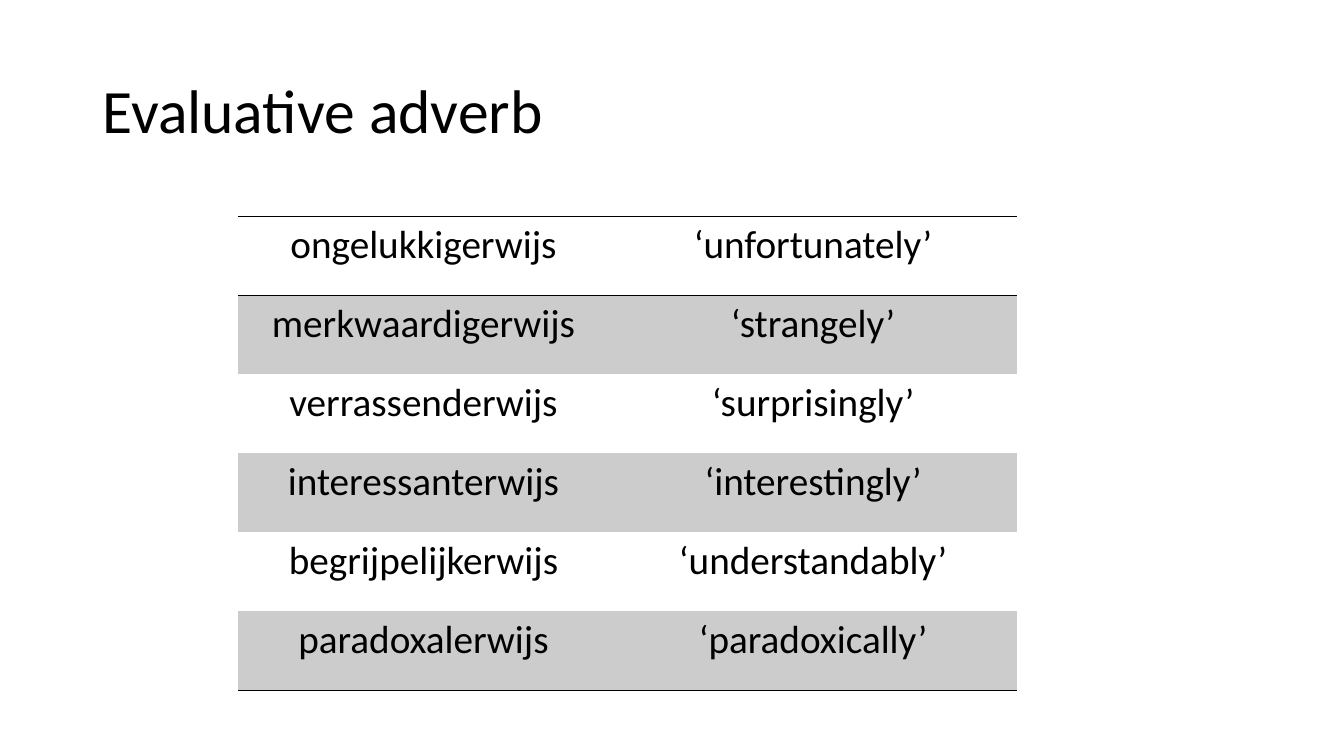
import lxml.etree
import pptx
import pptx.dml.color
import pptx.enum.text
import pptx.oxml.ns
import pptx.util

Pt = pptx.util.Pt
ALIGN = pptx.enum.text.PP_ALIGN
ANCHOR = pptx.enum.text.MSO_ANCHOR

BLACK = pptx.dml.color.RGBColor(0x00, 0x00, 0x00)
GRAY = pptx.dml.color.RGBColor(0xCC, 0xCC, 0xCC)
FONT = "Calibri"

ADVERBS = [
    ("ongelukkigerwijs", "‘unfortunately’"),
    ("merkwaardigerwijs", "‘strangely’"),
    ("verrassenderwijs", "‘surprisingly’"),
    ("interessanterwijs", "‘interestingly’"),
    ("begrijpelijkerwijs", "‘understandably’"),
    ("paradoxalerwijs", "‘paradoxically’"),
]
COLUMN_WIDTHS = (265, 291.6)
ROW_HEIGHT = 56.4
RULED_EDGES = (0, 1, len(ADVERBS))


def write_text(text_frame, text, size, align, anchor, line_spacing=1.0):
    text_frame.word_wrap = True
    text_frame.vertical_anchor = anchor
    paragraph = text_frame.paragraphs[0]
    paragraph.alignment = align
    paragraph.line_spacing = line_spacing
    run = paragraph.add_run()
    run.text = text
    run.font.name = FONT
    run.font.size = Pt(size)
    run.font.bold = False
    run.font.color.rgb = BLACK


def add_border(cell, side, visible):
    name = pptx.oxml.ns.qn
    properties = cell._tc.get_or_add_tcPr()
    line = lxml.etree.SubElement(properties, name(f"a:ln{side}"), w=str(Pt(1)))
    if visible:
        fill = lxml.etree.SubElement(line, name("a:solidFill"))
        lxml.etree.SubElement(fill, name("a:srgbClr"), val=str(BLACK))
    else:
        lxml.etree.SubElement(line, name("a:noFill"))


def format_cell(cell, text, row_index):
    write_text(cell.text_frame, text, size=28, align=ALIGN.CENTER, anchor=ANCHOR.TOP)
    add_border(cell, "L", False)
    add_border(cell, "R", False)
    add_border(cell, "T", row_index in RULED_EDGES)
    add_border(cell, "B", row_index + 1 in RULED_EDGES)
    if row_index % 2:
        cell.fill.solid()
        cell.fill.fore_color.rgb = GRAY
    else:
        cell.fill.background()


def add_title(slide, text):
    title = slide.shapes.title
    title.left, title.top = Pt(66), Pt(28.75)
    title.width, title.height = Pt(828), Pt(104.4)
    write_text(title.text_frame, text, size=44, align=ALIGN.LEFT,
               anchor=ANCHOR.MIDDLE, line_spacing=0.9)


def add_adverb_table(slide, left, top):
    frame = slide.shapes.add_table(
        len(ADVERBS), len(COLUMN_WIDTHS), Pt(left), Pt(top),
        Pt(sum(COLUMN_WIDTHS)), Pt(ROW_HEIGHT * len(ADVERBS)))
    table = frame.table
    table.first_row = False
    table.horz_banding = False
    for column, width in zip(table.columns, COLUMN_WIDTHS):
        column.width = Pt(width)
    for row_index, (row, words) in enumerate(zip(table.rows, ADVERBS)):
        row.height = Pt(ROW_HEIGHT)
        for cell, word in zip(row.cells, words):
            format_cell(cell, word, row_index)


def main():
    presentation = pptx.Presentation()
    presentation.slide_width = Pt(960)
    presentation.slide_height = Pt(540)
    slide = presentation.slides.add_slide(presentation.slide_layouts[5])
    add_title(slide, "Evaluative adverb")
    add_adverb_table(slide, left=170, top=154.7)
    presentation.save("out.pptx")


if __name__ == "__main__":
    main()
